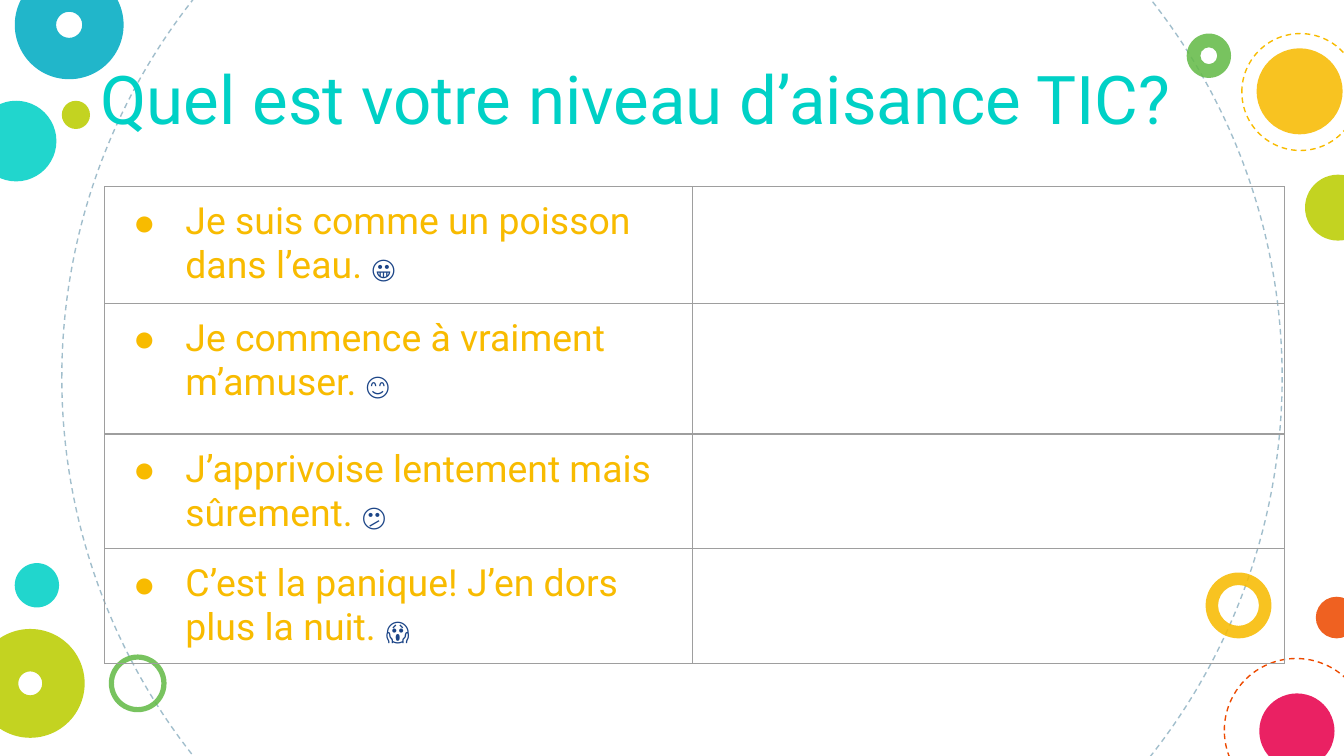
"""Build the slide that asks participants how comfortable they are with ICT."""
from dataclasses import dataclass
from typing import Optional

import pptx
import pptx.dml.color
import pptx.enum.dml
import pptx.enum.shapes
import pptx.enum.text
import pptx.oxml
import pptx.oxml.ns
import pptx.util

Inches = pptx.util.Inches
Pt = pptx.util.Pt


@dataclass(frozen=True)
class Theme:
    """Colours, fonts and type sizes."""
    turquoise: str = "00D1C6"
    yellow: str = "F8BB00"
    blue: str = "00ACC3"
    lime: str = "BBCD00"
    orange: str = "ED4A00"
    green: str = "65BB48"
    pink: str = "E8004C"
    mist: str = "A1BECC"
    grid: str = "9E9E9E"
    navy: str = "1C4587"
    text_font: str = "Roboto"
    symbol_font: str = "Arial"
    title_size: float = 36
    answer_size: float = 20
    emoji_size: float = 14
    line_width: float = 0.75
    opacity: int = 87


@dataclass(frozen=True)
class Disc:
    """A filled circle, or a ring when it has a thickness."""
    left: float
    top: float
    size: float
    colour: str
    thickness: Optional[float] = None


@dataclass(frozen=True)
class Orbit:
    """A dashed circle without fill."""
    left: float
    top: float
    size: float
    colour: str


@dataclass(frozen=True)
class Answer:
    """One level of comfort, with its emoji and row height."""
    wording: str
    emoji: str
    height: float


THEME = Theme()

DECORATIONS = (
    Orbit(0.46, -1.73, 9.08, THEME.mist),
    Disc(-0.18, 0.75, 0.6, THEME.turquoise),
    Disc(8.97, 4.26, 0.49, THEME.yellow, 0.19),
    Disc(0.11, -0.22, 0.81, THEME.blue, 0.38),
    Disc(0.46, 0.75, 0.21, THEME.lime),
    Orbit(9.11, 4.9, 1.07, THEME.orange),
    Disc(0.81, 4.87, 0.43, THEME.green, 0.09),
    Disc(9.79, 4.44, 0.31, THEME.orange),
    Disc(-0.18, 4.68, 0.81, THEME.lime, 0.39),
    Disc(9.37, 5.16, 0.56, THEME.pink),
    Disc(8.83, 0.25, 0.33, THEME.green, 0.31),
    Disc(9.35, 0.36, 0.64, THEME.yellow),
    Disc(9.71, 1.3, 0.49, THEME.lime),
    Orbit(9.24, 0.25, 0.87, THEME.yellow),
    Disc(0.11, 4.19, 0.33, THEME.turquoise),
)

ANSWERS = (
    Answer("Je suis comme un poisson dans l’eau. ", "😀", 0.87),
    Answer("Je commence à vraiment m’amuser. ", "😊", 0.97),
    Answer("J’apprivoise lentement mais sûrement. ", "😕", 0.85),
    Answer("C’est la panique! J’en dors plus la nuit. ", "😱", 0.85),
)
COLUMN_WIDTHS = (4.37, 4.41)


def rgb(colour: str) -> pptx.dml.color.RGBColor:
    """Turn a hex string into a colour."""
    return pptx.dml.color.RGBColor.from_string(colour)


def xml(markup: str):
    """Parse one element of the drawing namespace."""
    head, mark, rest = markup.partition(">")
    slash = "/" if head.endswith("/") else ""
    namespace = pptx.oxml.ns.nsdecls("a")
    return pptx.oxml.parse_xml(f"{head.rstrip('/')} {namespace}{slash}{mark}{rest}")


def style_font(font, name: str, size: float, colour: str) -> None:
    """Set the typeface, size and colour of a font."""
    font.name, font.size = name, Pt(size)
    font.color.rgb = rgb(colour)


def add_circle(slide, kind, circle):
    """Add a round shape without shadow."""
    size = Inches(circle.size)
    shape = slide.shapes.add_shape(kind, Inches(circle.left), Inches(circle.top), size, size)
    shape.shadow.inherit = False
    return shape


def add_disc(slide, disc: Disc) -> None:
    """Draw a translucent disc or ring."""
    kinds = pptx.enum.shapes.MSO_SHAPE
    shape = add_circle(slide, kinds.DONUT if disc.thickness else kinds.OVAL, disc)
    if disc.thickness:
        shape.adjustments[0] = disc.thickness
    shape.fill.solid()
    shape.fill.fore_color.rgb = rgb(disc.colour)
    shape.line.fill.background()
    tint = shape._element.spPr.find(".//" + pptx.oxml.ns.qn("a:srgbClr"))
    tint.append(xml(f'<a:alpha val="{THEME.opacity * 1000}"/>'))


def add_orbit(slide, orbit: Orbit) -> None:
    """Draw a dashed outline."""
    shape = add_circle(slide, pptx.enum.shapes.MSO_SHAPE.OVAL, orbit)
    shape.fill.background()
    shape.line.color.rgb = rgb(orbit.colour)
    shape.line.width = Pt(THEME.line_width)
    shape.line.dash_style = pptx.enum.dml.MSO_LINE.DASH


def place_title(slide, wording: str) -> None:
    """Fill the title placeholder and bring it in front of the circles."""
    title = slide.shapes.title
    title.left, title.top = Inches(0.65), Inches(0.32)
    title.width, title.height = Inches(8.44), Inches(0.81)
    frame = title.text_frame
    frame.text = wording
    frame.word_wrap = True
    frame.auto_size = pptx.enum.text.MSO_AUTO_SIZE.NONE
    frame.vertical_anchor = pptx.enum.text.MSO_ANCHOR.BOTTOM
    frame.margin_left = frame.margin_right = Inches(0.1)
    frame.margin_top = frame.margin_bottom = Inches(0.1)
    paragraph = frame.paragraphs[0]
    paragraph.alignment = pptx.enum.text.PP_ALIGN.LEFT
    style_font(paragraph.font, THEME.text_font, THEME.title_size, THEME.turquoise)
    slide.shapes._spTree.append(title._element)


def format_cell(cell) -> None:
    """Clear the fill and draw all four borders."""
    cell.margin_left = cell.margin_right = Inches(0.1)
    cell.margin_top = cell.margin_bottom = Inches(0.1)
    cell.fill.background()
    properties = cell._tc.get_or_add_tcPr()
    for position, side in enumerate("LRTB"):
        properties.insert(position, xml(
            f'<a:ln{side} w="{Pt(THEME.line_width)}"><a:solidFill>'
            f'<a:srgbClr val="{THEME.grid}"/></a:solidFill></a:ln{side}>'))


def write_answer(cell, answer: Answer) -> None:
    """Write the bulleted wording followed by its emoji."""
    paragraph = cell.text_frame.paragraphs[0]
    properties = paragraph._p.get_or_add_pPr()
    properties.set("marL", str(Inches(0.5)))
    properties.set("indent", str(Inches(-0.39)))
    for markup in (f'<a:buClr><a:srgbClr val="{THEME.yellow}"/></a:buClr>',
                   f'<a:buSzPts val="{THEME.answer_size * 100}"/>',
                   f'<a:buFont typeface="{THEME.symbol_font}"/>',
                   '<a:buChar char="●"/>'):
        properties.append(xml(markup))
    wording, emoji = paragraph.add_run(), paragraph.add_run()
    wording.text, emoji.text = answer.wording, answer.emoji
    style_font(wording.font, THEME.text_font, THEME.answer_size, THEME.yellow)
    style_font(emoji.font, THEME.symbol_font, THEME.emoji_size, THEME.navy)


def add_answers(slide) -> None:
    """Add the table with answers on the left and an empty column on the right."""
    height = sum(answer.height for answer in ANSWERS)
    table = slide.shapes.add_table(
        len(ANSWERS), len(COLUMN_WIDTHS), Inches(0.78), Inches(1.39),
        Inches(sum(COLUMN_WIDTHS)), Inches(height)).table
    table.first_row = table.horz_banding = False
    for column, width in zip(table.columns, COLUMN_WIDTHS):
        column.width = Inches(width)
    for row, answer in zip(table.rows, ANSWERS):
        row.height = Inches(answer.height)
        for cell in row.cells:
            format_cell(cell)
        write_answer(row.cells[0], answer)


def main() -> None:
    """Assemble and save the slide."""
    deck = pptx.Presentation()
    deck.slide_width = Inches(10)
    deck.slide_height = deck.slide_width * 9 // 16
    slide = deck.slides.add_slide(deck.slide_layouts[5])
    for decoration in DECORATIONS:
        draw = add_disc if isinstance(decoration, Disc) else add_orbit
        draw(slide, decoration)
    place_title(slide, "Quel est votre niveau d’aisance TIC?")
    add_answers(slide)
    deck.save("out.pptx")


if __name__ == "__main__":
    main()
